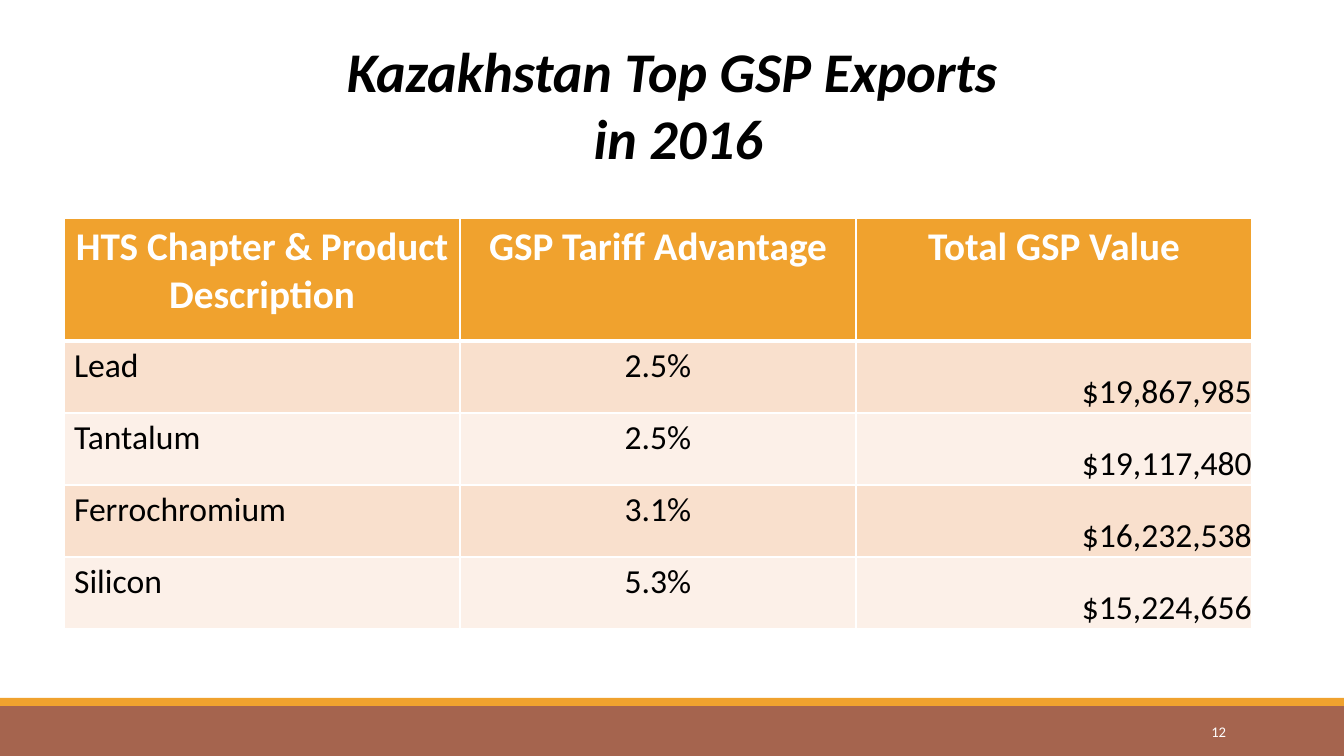
"""Build the slide on Kazakhstan's top GSP exports in 2016."""
from lxml.etree import SubElement
from pptx import Presentation
from pptx.dml.color import RGBColor
from pptx.enum.shapes import MSO_SHAPE as Shape
from pptx.enum.text import MSO_ANCHOR as Anchor, PP_ALIGN as Align
from pptx.oxml.ns import qn
from pptx.util import Pt

PX = 914400 / 100.8
COLORS = {"orange": "F0A22E", "brown": "A5644E", "peach": "F9E0CD",
          "cream": "FCF0E8", "white": "FFFFFF", "black": "000000"}


def px(*lengths):
    return [round(length * PX) for length in lengths]


def add_run(paragraph, text, size, color, bold=False, italic=False):
    run = paragraph.add_run()
    run.text = text
    font = run.font
    font.name, font.size, font.bold, font.italic = "Calibri", Pt(size), bold, italic
    font.color.rgb = RGBColor.from_string(COLORS[color])


deck = Presentation()
deck.slide_width, deck.slide_height = px(1344, 756)
slide = deck.slides.add_slide(deck.slide_layouts[6])

for top, height, color in [(706, 50, "brown"), (698, 8, "orange")]:
    band = slide.shapes.add_shape(Shape.RECTANGLE, *px(0, top, 1344, height))
    band.shadow.inherit = False
    band.fill.solid()
    band.fill.fore_color.rgb = RGBColor.from_string(COLORS[color])
    band.line.fill.background()

page_number = slide.shapes.add_textbox(*px(1092, 712, 144, 40)).text_frame
page_number.word_wrap = True
page_number.vertical_anchor = Anchor.MIDDLE
page_number.paragraphs[0].alignment = Align.RIGHT
add_run(page_number.paragraphs[0], "12", 10.5, "white")

title = slide.shapes.add_textbox(*px(168, 50, 1008, 126)).text_frame
title.word_wrap = True
title.vertical_anchor = Anchor.BOTTOM
heading = title.paragraphs[0]
heading.alignment = Align.CENTER
add_run(heading, "Kazakhstan Top GSP Exports", 40, "black", True, True)
heading.add_line_break()
add_run(heading, " in 2016", 40, "black", True, True)

exports = [
    ("HTS Chapter & Product Description", "GSP Tariff Advantage", "Total GSP Value"),
    ("Lead", "2.5%", "$19,867,985"),
    ("Tantalum", "2.5%", "$19,117,480"),
    ("Ferrochromium", "3.1%", "$16,232,538"),
    ("Silicon", "5.3%", "$15,224,656"),
]
table = slide.shapes.add_table(5, 3, *px(64, 218, 1188, 411)).table
for column in table.columns:
    column.width = px(396)[0]
for row, height in zip(table.rows, [123, 72, 72, 72, 72]):
    row.height = px(height)[0]

for r, record in enumerate(exports):
    header = r == 0
    fill = "orange" if header else ("cream", "peach")[r % 2]
    for c, text in enumerate(record):
        cell = table.cell(r, c)
        paragraph = cell.text_frame.paragraphs[0]
        paragraph.alignment = Align.CENTER if header else (Align.LEFT, Align.CENTER, Align.RIGHT)[c]
        add_run(paragraph, text, 28 if header else 24, "white" if header else "black", header)
        if c == 2 and not header:
            cell.vertical_anchor = Anchor.BOTTOM
            cell.margin_left = cell.margin_right = cell.margin_top = cell.margin_bottom = 0
        for side in ("L", "R", "T", "B"):
            thick = (header and side == "B") or (r == 1 and side == "T")
            border = SubElement(cell._tc.get_or_add_tcPr(), qn(f"a:ln{side}"), w=str(Pt(3 if thick else 1)))
            SubElement(SubElement(border, qn("a:solidFill")), qn("a:srgbClr"), val=COLORS["white"])
        cell.fill.solid()
        cell.fill.fore_color.rgb = RGBColor.from_string(COLORS[fill])

deck.save("out.pptx")
